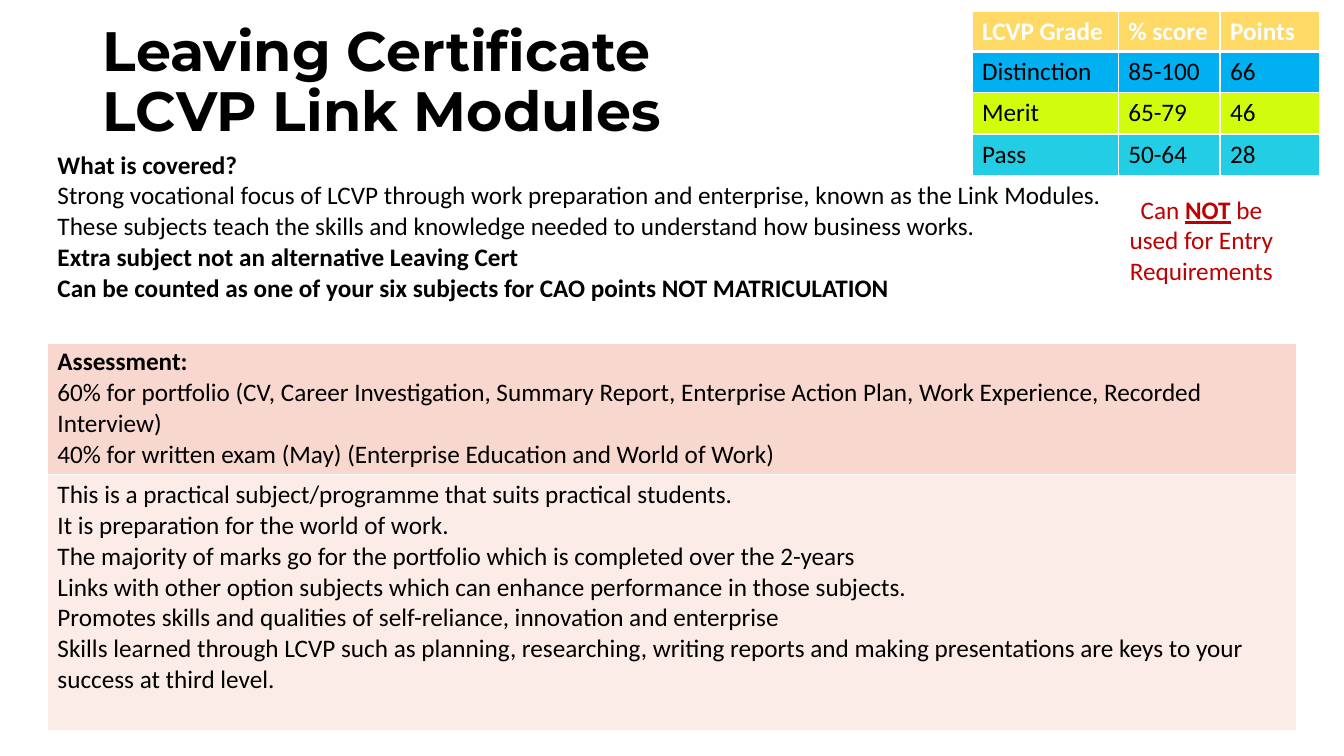
from dataclasses import dataclass

from lxml.etree import SubElement
from pptx import Presentation
from pptx.dml.color import RGBColor
from pptx.enum.text import MSO_ANCHOR, MSO_AUTO_SIZE, PP_ALIGN
from pptx.oxml.ns import qn
from pptx.util import Inches, Pt


@dataclass
class Line:
    text: str
    bold: bool = False
    color: str = "000000"
    align: PP_ALIGN = PP_ALIGN.LEFT


@dataclass
class Row:
    fill: str
    height: float
    cells: list[list[Line]]
    bottom_border: float = 1


def rgb(value: str) -> RGBColor:
    return RGBColor.from_string(value)


def style_font(font, size: float, color: str, bold: bool = False, name: str = "Calibri") -> None:
    font.name = name
    font.size = Pt(size)
    font.bold = bold
    font.color.rgb = rgb(color)


def add_borders(cell, bottom_width: float) -> None:
    properties = cell._tc.get_or_add_tcPr()
    widths = {"a:lnL": 1, "a:lnR": 1, "a:lnT": 1, "a:lnB": bottom_width}
    for tag, width in widths.items():
        border = SubElement(properties, qn(tag), w=str(Pt(width)))
        fill = SubElement(border, qn("a:solidFill"))
        SubElement(fill, qn("a:srgbClr"), val="FFFFFF")


def write_lines(frame, lines: list[Line]) -> None:
    for index, line in enumerate(lines):
        para = frame.add_paragraph() if index else frame.paragraphs[0]
        para.text = line.text
        para.alignment = line.align
        style_font(para.font, 18, line.color, line.bold)


def draw_table(page, left: float, top: float, widths: list[float], rows: list[Row]) -> None:
    height = sum(row.height for row in rows)
    table = page.shapes.add_table(
        len(rows), len(widths), Inches(left), Inches(top), Inches(sum(widths)), Inches(height)
    ).table
    for column, width in zip(table.columns, widths):
        column.width = Inches(width)
    for row_index, row in enumerate(rows):
        table.rows[row_index].height = Inches(row.height)
        for column_index, lines in enumerate(row.cells):
            cell = table.cell(row_index, column_index)
            write_lines(cell.text_frame, lines)
            add_borders(cell, row.bottom_border)
            cell.fill.solid()
            cell.fill.fore_color.rgb = rgb(row.fill)


def draw_title(page) -> None:
    title = page.shapes.title
    title.left, title.top = Inches(0.92), Inches(0.4)
    title.width, title.height = Inches(11.5), Inches(1.45)
    frame = title.text_frame
    frame.vertical_anchor = MSO_ANCHOR.MIDDLE
    frame.auto_size = MSO_AUTO_SIZE.NONE
    frame.margin_top, frame.margin_bottom = Inches(0), Inches(0.6)
    frame.text = "Leaving Certificate\vLCVP Link Modules"
    para = frame.paragraphs[0]
    para.alignment = PP_ALIGN.LEFT
    para.line_spacing = 0.9
    style_font(para.font, 39.6, "000000", True, "Montserrat")


def draw_warning(page) -> None:
    box = page.shapes.add_textbox(Inches(11.09), Inches(1.88), Inches(1.65), Inches(1.01))
    frame = box.text_frame
    frame.word_wrap = True
    frame.auto_size = MSO_AUTO_SIZE.SHAPE_TO_FIT_TEXT
    para = frame.paragraphs[0]
    para.alignment = PP_ALIGN.CENTER
    style_font(para.font, 18, "C00000")
    for text in ("Can ", "NOT", " be used for Entry Requirements"):
        span = para.add_run()
        span.text = text
        if text == "NOT":
            span.font.bold = True
            span.font.underline = True


COVERED = [
    Line("What is covered?", True, align=PP_ALIGN.JUSTIFY),
    Line(
        "Strong vocational focus of LCVP through work preparation and enterprise, "
        "known as the Link Modules.",
        align=PP_ALIGN.JUSTIFY,
    ),
    Line(
        "These subjects teach the skills and knowledge needed to understand how business works.",
        align=PP_ALIGN.JUSTIFY,
    ),
    Line("Extra subject not an alternative Leaving Cert", True),
    Line("Can be counted as one of your six subjects for CAO points NOT MATRICULATION", True),
]
ASSESSMENT = [
    Line("Assessment:", True),
    Line(
        "60% for portfolio (CV, Career Investigation, Summary Report, Enterprise Action Plan, "
        "Work Experience, Recorded Interview)"
    ),
    Line("40% for written exam (May) (Enterprise Education and World of Work)"),
]
BENEFITS = [
    Line("This is a practical subject/programme that suits practical students."),
    Line("It is preparation for the world of work."),
    Line("The majority of marks go for the portfolio which is completed over the 2-years"),
    Line("Links with other option subjects which can enhance performance in those subjects."),
    Line("Promotes skills and qualities of self-reliance, innovation and enterprise"),
    Line(
        "Skills learned through LCVP such as planning, researching, writing reports and making "
        "presentations are keys to your success at third level."
    ),
]
MODULE_ROWS = [
    Row("FFFFFF", 1.95, [COVERED], 3),
    Row("F8D7CE", 1.3, [ASSESSMENT]),
    Row("FCECE8", 2.54, [BENEFITS]),
]
GRADES = [
    ("FFD966", "LCVP Grade", "% score", "Points"),
    ("00B0F0", "Distinction", "85-100", "66"),
    ("CFFD0B", "Merit", "65-79", "46"),
    ("23CEE5", "Pass", "50-64", "28"),
]


def grade_rows() -> list[Row]:
    rows = []
    for index, (fill, *texts) in enumerate(GRADES):
        header = index == 0
        color = "FFFFFF" if header else "000000"
        cells = [[Line(text, header, color)] for text in texts]
        rows.append(Row(fill, 0.4 if header else 0.41, cells, 3 if header else 1))
    return rows


def main() -> None:
    deck = Presentation()
    deck.slide_width, deck.slide_height = Inches(13.33), Inches(7.5)
    page = deck.slides.add_slide(deck.slide_layouts[5])
    draw_title(page)
    draw_table(page, 0.47, 1.44, [12.39], MODULE_ROWS)
    draw_warning(page)
    draw_table(page, 9.64, 0.11, [1.45, 1.01, 0.99], grade_rows())
    deck.save("out.pptx")


if __name__ == "__main__":
    main()
